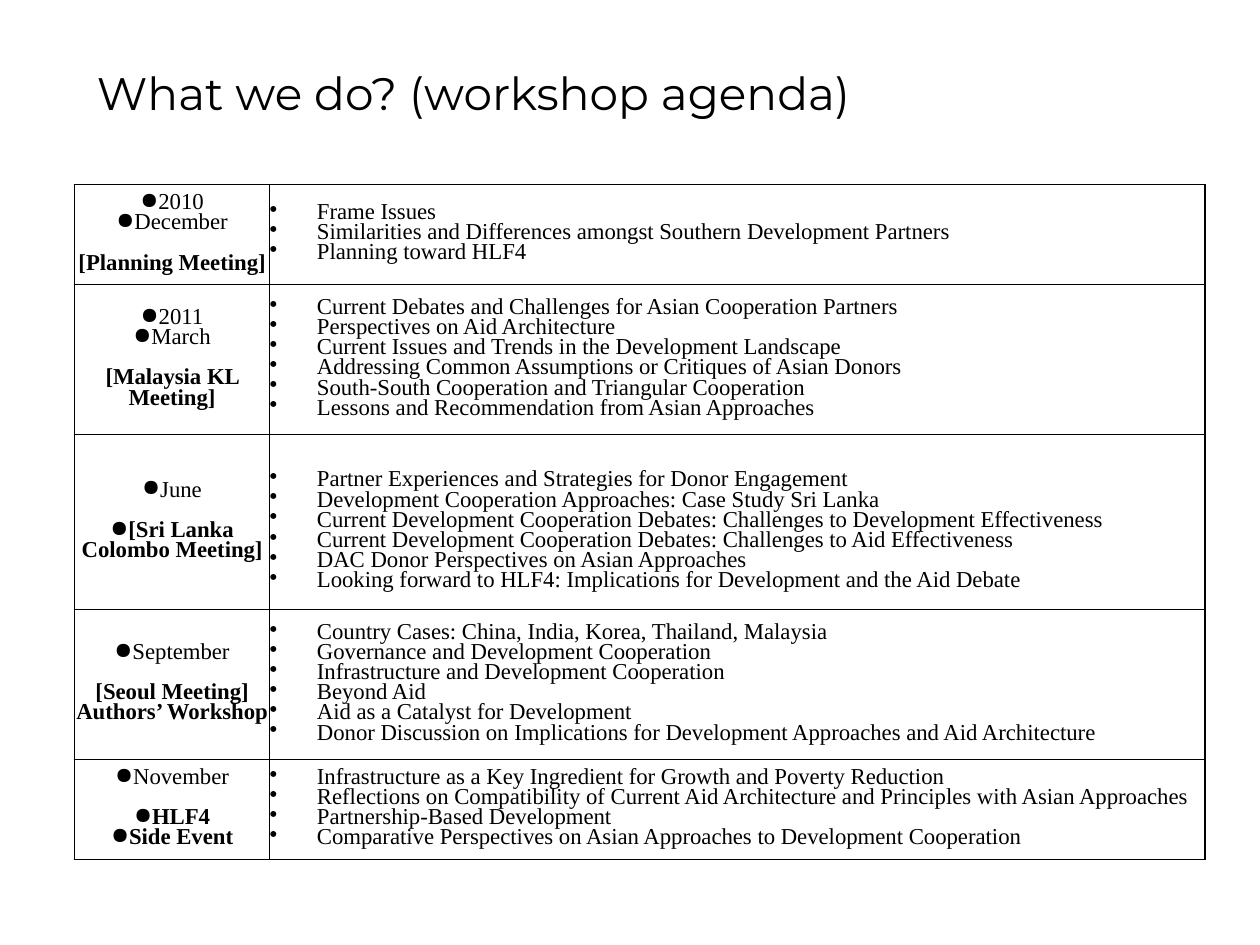
from dataclasses import dataclass

import lxml.etree
import pptx
import pptx.dml.color
import pptx.enum.text
import pptx.oxml.ns
import pptx.table
import pptx.text.text
import pptx.util

Pt = pptx.util.Pt
PP_ALIGN = pptx.enum.text.PP_ALIGN
MSO_ANCHOR = pptx.enum.text.MSO_ANCHOR
qn = pptx.oxml.ns.qn

BLACK = pptx.dml.color.RGBColor(0x00, 0x00, 0x00)
TITLE_FONT = "Montserrat"
TABLE_FONT = "Times New Roman"
TEXT_SIZE = Pt(13)
LINE_PITCH = Pt(11.5)
TOPIC_INDENT = Pt(27)
COLUMN_WIDTHS = (Pt(111.6), Pt(534.4))


@dataclass(frozen=True)
class Line:
    text: str
    bullet: str = ""
    bold: bool = False
    gap_above: bool = False


@dataclass(frozen=True)
class Session:
    height: float
    heading: tuple[Line, ...]
    topics: tuple[str, ...]
    topics_top: float = 0


def date(text: str) -> Line:
    return Line(text, bullet="●")


def event(text: str, bullet: str = "", gap_above: bool = True) -> Line:
    return Line(text, bullet, bold=True, gap_above=gap_above)


SESSIONS = (
    Session(57.14, (date("2010"), date("December"), event("[Planning Meeting]")), (
        "Frame Issues",
        "Similarities and Differences amongst Southern Development Partners",
        "Planning toward HLF4",
    )),
    Session(85.71, (date("2011"), date("March"), event("[Malaysia KL Meeting]")), (
        "Current Debates and Challenges for Asian Cooperation Partners",
        "Perspectives on Aid Architecture",
        "Current Issues and Trends in the Development Landscape",
        "Addressing Common Assumptions or Critiques of Asian Donors",
        "South-South Cooperation and Triangular Cooperation",
        "Lessons and Recommendation from Asian Approaches",
    )),
    Session(100, (date("June"), event("[Sri Lanka Colombo Meeting]", "●")), (
        "Partner Experiences and Strategies for Donor Engagement",
        "Development Cooperation Approaches: Case Study Sri Lanka",
        "Current Development Cooperation Debates: Challenges to Development Effectiveness",
        "Current Development Cooperation Debates: Challenges to Aid Effectiveness",
        "DAC Donor Perspectives on Asian Approaches",
        "Looking forward to HLF4: Implications for Development and the Aid Debate",
    ), topics_top=11.5),
    Session(85.71, (date("September"), event("[Seoul Meeting] Authors’ Workshop")), (
        "Country Cases: China, India, Korea, Thailand, Malaysia",
        "Governance and Development Cooperation",
        "Infrastructure and Development Cooperation",
        "Beyond Aid",
        "Aid as a Catalyst for Development",
        "Donor Discussion on Implications for Development Approaches and Aid Architecture",
    )),
    Session(57.14, (date("November"), event("HLF4", "●"), event("Side Event", "●", False)), (
        "Infrastructure as a Key Ingredient for Growth and Poverty Reduction",
        "Reflections on Compatibility of Current Aid Architecture and Principles with Asian Approaches",
        "Partnership-Based Development",
        "Comparative Perspectives on Asian Approaches to Development Cooperation",
    )),
)


def add_bullet(paragraph: pptx.text.text._Paragraph, character: str, indent: int) -> None:
    properties = paragraph._p.get_or_add_pPr()
    properties.set("marL", str(indent))
    properties.set("indent", str(-indent))
    lxml.etree.SubElement(properties, qn("a:buChar"), char=character)


def draw_borders(cell: pptx.table._Cell) -> None:
    properties = cell._tc.get_or_add_tcPr()
    for position, side in enumerate(("lnL", "lnR", "lnT", "lnB")):
        border = lxml.etree.Element(qn(f"a:{side}"), w=str(Pt(1)))
        fill = lxml.etree.SubElement(border, qn("a:solidFill"))
        lxml.etree.SubElement(fill, qn("a:srgbClr"), val=str(BLACK))
        properties.insert(position, border)


def fill_cell(cell: pptx.table._Cell, lines: tuple[Line, ...], alignment: PP_ALIGN,
              indent: int = 0, margin_top: int = 0) -> None:
    cell.margin_left = cell.margin_right = cell.margin_bottom = 0
    cell.margin_top = margin_top
    cell.vertical_anchor = MSO_ANCHOR.MIDDLE
    cell.fill.background()
    draw_borders(cell)
    cell.text_frame.text = "\n".join(line.text for line in lines)
    for paragraph, line in zip(cell.text_frame.paragraphs, lines):
        paragraph.alignment = alignment
        paragraph.line_spacing = LINE_PITCH
        paragraph.space_before = LINE_PITCH if line.gap_above else Pt(0)
        if line.bullet:
            add_bullet(paragraph, line.bullet, indent)
        for run in paragraph.runs:
            run.font.name = TABLE_FONT
            run.font.size = TEXT_SIZE
            run.font.bold = line.bold
            run.font.color.rgb = BLACK


def add_title(slide: pptx.slide.Slide) -> None:
    title = slide.shapes.title
    title.left, title.top, title.width, title.height = Pt(48.2), Pt(15), Pt(572.4), Pt(75)
    frame = title.text_frame
    frame.text = "What we do? (workshop agenda)"
    frame.auto_size = pptx.enum.text.MSO_AUTO_SIZE.NONE
    frame.vertical_anchor = MSO_ANCHOR.MIDDLE
    paragraph = frame.paragraphs[0]
    paragraph.alignment = PP_ALIGN.LEFT
    font = paragraph.runs[0].font
    font.name = TITLE_FONT
    font.size = Pt(26)
    font.color.rgb = BLACK


def add_agenda(slide: pptx.slide.Slide) -> None:
    height = Pt(sum(session.height for session in SESSIONS))
    table = slide.shapes.add_table(len(SESSIONS), len(COLUMN_WIDTHS), Pt(42.5), Pt(105.5),
                                   sum(COLUMN_WIDTHS), height).table
    table.first_row = table.horz_banding = False
    for column, width in zip(table.columns, COLUMN_WIDTHS):
        column.width = width
    for index, session in enumerate(SESSIONS):
        table.rows[index].height = Pt(session.height)
        fill_cell(table.cell(index, 0), session.heading, PP_ALIGN.CENTER)
        topics = tuple(Line(topic, bullet="•") for topic in session.topics)
        fill_cell(table.cell(index, 1), topics, PP_ALIGN.LEFT, TOPIC_INDENT,
                  Pt(session.topics_top))


def main() -> None:
    presentation = pptx.Presentation()
    presentation.slide_width, presentation.slide_height = Pt(720), Pt(540)
    slide = presentation.slides.add_slide(presentation.slide_layouts[5])
    add_title(slide)
    add_agenda(slide)
    presentation.save("out.pptx")


if __name__ == "__main__":
    main()
